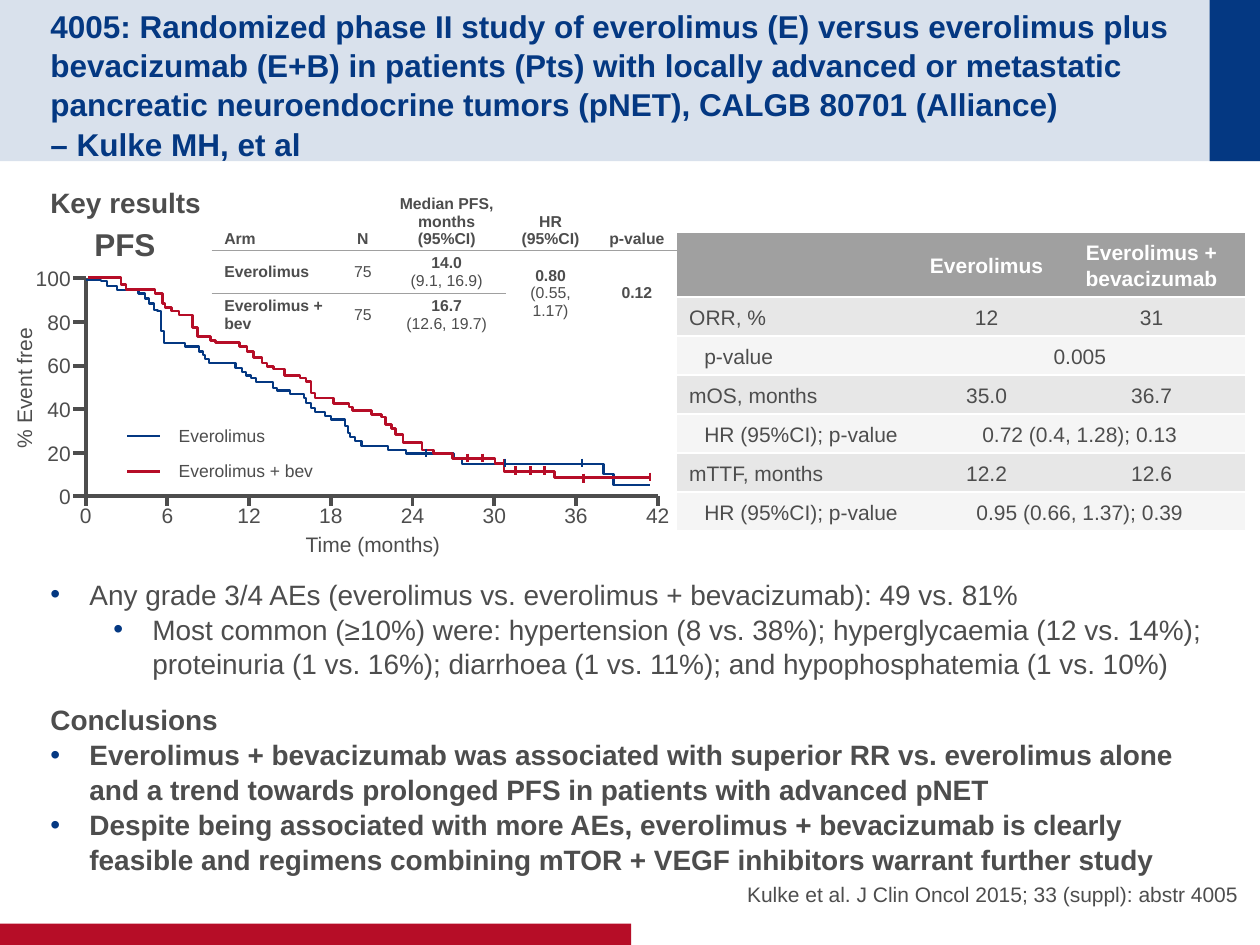
from lxml import etree
from pptx import Presentation
from pptx import util as u
from pptx.dml.color import RGBColor
from pptx.enum import shapes, text
from pptx.oxml import ns

NAVY, RED, INK, GREY, WHITE = "043882", "B60D27", "4D4D4D", "A0A0A0", "FFFFFF"
PALE_BLUE, BAND, PALE_BAND = "D9E1EC", "E7E7E7", "F5F5F5"
LEFT, CENTER, RIGHT = text.PP_ALIGN.LEFT, text.PP_ALIGN.CENTER, text.PP_ALIGN.RIGHT
TOP, MIDDLE, BOTTOM = text.MSO_ANCHOR.TOP, text.MSO_ANCHOR.MIDDLE, text.MSO_ANCHOR.BOTTOM
PLAIN_TABLE = "{2D5ABB26-0587-4C30-8999-92F81FD0307C}"


def rgb(value):
    return RGBColor.from_string(value)


def child(parent, tag, **attributes):
    return etree.SubElement(parent, ns.qn(tag), **attributes)


class Board:
    """A slide on a grid of 1000 columns by 750 rows, with one text style."""
    face = "Arial"

    def __init__(self, deck, layout):
        self.slide = deck.slides.add_slide(deck.slide_layouts[layout])
        self.shapes = self.slide.shapes
        self.unit = deck.slide_width // 1000

    def grid(self, *cells):
        return [u.Emu(round(cell * self.unit)) for cell in cells]

    def style(self, paragraph, size, color=INK, bold=False, align=LEFT):
        paragraph.alignment = align
        font = paragraph.font
        font.name, font.size, font.bold = self.face, u.Pt(size), bold
        font.color.rgb = rgb(color)

    def frame(self, shape, insets, anchor=TOP, wrap=True):
        frame = shape.text_frame
        frame.word_wrap, frame.vertical_anchor = wrap, anchor
        frame.auto_size = text.MSO_AUTO_SIZE.NONE
        (frame.margin_left, frame.margin_top,
         frame.margin_right, frame.margin_bottom) = self.grid(*insets)
        return frame

    def placeholder(self, index, at, insets, anchor=TOP):
        holder = self.slide.placeholders[index]
        holder.left, holder.top, holder.width, holder.height = self.grid(*at)
        self.shapes._spTree.append(holder._element)  # in front of the backdrop
        return self.frame(holder, insets, anchor)

    def label(self, at, words, size=12, align=LEFT, bold=False, anchor=TOP,
              rotation=0, insets=(10, 5, 10, 5)):
        box = self.shapes.add_textbox(*self.grid(*at))
        box.rotation = rotation
        paragraph = self.frame(box, insets, anchor, wrap=False).paragraphs[0]
        paragraph.text = words
        self.style(paragraph, size, bold=bold, align=align)

    def bar(self, at, color):
        bar = self.shapes.add_shape(shapes.MSO_SHAPE.RECTANGLE, *self.grid(*at))
        bar.shadow.inherit = False
        bar.fill.solid()
        bar.fill.fore_color.rgb = rgb(color)
        bar.line.fill.background()

    def line(self, start, end, color=INK, width=2.25):
        line = self.shapes.add_connector(shapes.MSO_CONNECTOR.STRAIGHT,
                                         *self.grid(*start, *end))
        line.line.color.rgb, line.line.width = rgb(color), u.Pt(width)
        child(line._element.spPr, "a:effectLst")

    def outline(self, points, color=INK, width=2.25):
        builder = self.shapes.build_freeform(*points[0], scale=self.unit)
        builder.add_line_segments(points[1:], close=False)
        outline = builder.convert_to_shape()
        outline.shadow.inherit = False
        outline.fill.background()
        outline.line.color.rgb, outline.line.width = rgb(color), u.Pt(width)

    def survival(self, start, drops, end, color, width):
        points = [start]
        for x, y in drops:
            points += [(x, points[-1][1]), (x, y)]
        self.outline(points + [(end, points[-1][1])], color, width)

    def bullet(self, paragraph, margin):
        props = paragraph._p.get_or_add_pPr()
        props.set("marL", str(self.grid(margin)[0]))
        props.set("indent", str(self.grid(-31 if margin else 0)[0]))
        if margin:
            child(child(props, "a:buClr"), "a:srgbClr", val=NAVY)
            child(props, "a:buFont", typeface=self.face)
            child(props, "a:buChar", char="•")
        else:
            child(props, "a:buNone")

    def table(self, at, columns, rows):
        table = self.shapes.add_table(len(rows), len(columns),
                                      *self.grid(*at, sum(columns), sum(rows))).table
        table._tbl.tblPr.find(ns.qn("a:tableStyleId")).text = PLAIN_TABLE
        table.first_row = table.horz_banding = False
        for column, width in zip(table.columns, self.grid(*columns)):
            column.width = width
        for row, height in zip(table.rows, self.grid(*rows)):
            row.height = height
        return table

    def cell(self, cell, fill=None, **edges):
        for side, color in edges.items():
            edge = child(cell._tc.get_or_add_tcPr(), f"a:{side}", w="12700")
            child(child(edge, "a:solidFill"), "a:srgbClr", val=color)
        if fill:
            cell.fill.solid()
            cell.fill.fore_color.rgb = rgb(fill)
        else:
            cell.fill.background()


def main():
    deck = Presentation()
    deck.slide_width, deck.slide_height = u.Inches(10), u.Inches(7.5)
    board = Board(deck, 3)

    # Backdrop
    board.bar((0, 0, 1000, 128), PALE_BLUE)
    board.bar((960, 0, 40, 128), NAVY)
    board.bar((0, 733, 501, 17), RED)

    # Title, list and citation
    title = board.placeholder(0, (40, 20, 901, 88), (0, 5, 0, 0), MIDDLE).paragraphs[0]
    title.text = ("4005: Randomized phase II study of everolimus (E) versus everolimus plus "
                  "bevacizumab (E+B) in patients (Pts) with locally advanced or metastatic "
                  "pancreatic neuroendocrine tumors (pNET), CALGB 80701 (Alliance) \v"
                  "– Kulke MH, et al")
    title.line_spacing = 1.04
    board.style(title, 18, NAVY, bold=True)

    findings = board.placeholder(1, (40, 452, 919, 245), (0, 5, 0, 5))
    points = [  # margin, space before, bold, words
        (31, 0, False, "Any grade 3/4 AEs (everolimus vs. everolimus + bevacizumab): 49 vs. 81%"),
        (81, 0, False, "Most common (≥10%) were: hypertension (8 vs. 38%); hyperglycaemia "
         "(12 vs. 14%); proteinuria (1 vs. 16%); diarrhoea (1 vs. 11%); and "
         "hypophosphatemia (1 vs. 10%)"),
        (0, 12, True, "Conclusions"),
        (31, 0, True, "Everolimus + bevacizumab was associated with superior RR vs. everolimus "
         "alone and a trend towards prolonged PFS in patients with advanced pNET"),
        (31, 0, True, "Despite being associated with more AEs, everolimus + bevacizumab is clearly "
         "feasible and regimens combining mTOR + VEGF inhibitors warrant further study")]
    for number, (margin, before, bold, words) in enumerate(points):
        point = findings.add_paragraph() if number else findings.paragraphs[0]
        point.text, point.level = words, int(margin > 31)
        board.bullet(point, margin)
        point.line_spacing, point.space_before = 1.04, u.Pt(before)
        board.style(point, 16, bold=bold)

    citation = board.placeholder(2, (508, 667, 475, 53), (0, 0, 0, 0), BOTTOM).paragraphs[0]
    citation.text = "Kulke et al. J Clin Oncol 2015; 33 (suppl): abstr 4005"
    board.bullet(citation, 0)
    citation.space_after = u.Pt(4)
    board.style(citation, 12, align=RIGHT)
    board.label((40, 142, 200, 36), "Key results", 16, bold=True, insets=(0, 5, 10, 5))

    # Response table
    rows = [("", "Everolimus", "Everolimus + bevacizumab"),
            ("ORR, %", "12", "31"), ("p-value", "0.005"),
            ("mOS, months", "35.0", "36.7"), ("HR (95%CI); p-value", "0.72 (0.4, 1.28); 0.13"),
            ("mTTF, months", "12.2", "12.6"), ("HR (95%CI); p-value", "0.95 (0.66, 1.37); 0.39")]
    response = board.table((537, 184), (189, 114, 148), [51] + [31] * 6)
    for r, row in enumerate(rows):
        shared = len(row) == 2
        for c in range(3):
            cell = response.cell(r, c)
            board.cell(cell, PALE_BAND if shared else BAND if r else GREY, lnT=WHITE, lnB=WHITE)
            cell.vertical_anchor = MIDDLE
            entry = cell.text_frame.paragraphs[0]
            entry.text = row[c] if c < len(row) else ""
            entry.line_spacing = u.Pt(15)
            board.style(entry, 12, INK if r else WHITE, not r, CENTER if c else LEFT)
        if shared:
            response.cell(r, 0).margin_left = board.grid(22)[0]
            response.cell(r, 1).merge(response.cell(r, 2))

    # Axes: 0 to 42 months, 0 to 100 percent
    left, top, right, base = 68, 221, 522, 394
    board.outline([(left, top), (left, base), (right, base)])
    for step in range(6):
        y = base - step * (base - top) / 5
        board.line((left - 10, y), (left, y))
        board.label((18, y - 15, 48, 30), str(step * 20), align=RIGHT, anchor=MIDDLE)
    for step in range(8):
        x = left + step * (right - left) / 7
        board.line((x, base), (x, base + 8))
        board.label((x - 19.5, base, 39, 30), str(step * 6), align=CENTER, anchor=MIDDLE)
    board.label((-39, 293, 116, 30), "% Event free", align=CENTER, rotation=270)
    board.label((232, 417, 128, 30), "Time (months)", align=CENTER)
    board.label((65, 174, 69, 40), "PFS", 18, bold=True)

    # Survival curves: each pair is where a drop happens and where it ends
    single = [(80, 223), (85, 227), (93, 230), (110, 233), (115, 237), (118, 241), (122, 246),
              (125, 247), (128, 263), (130, 272), (147, 275), (158, 279), (161, 282), (163, 285),
              (166, 288), (187, 292), (192, 295), (195, 298), (199, 300), (203, 303), (217, 308),
              (220, 310), (230, 313), (241, 316), (243, 320), (247, 324), (250, 327), (258, 330),
              (263, 333), (274, 338), (276, 344), (278, 347), (282, 350), (287, 354), (308, 357),
              (322, 360), (360, 364), (367, 368), (479, 376), (487, 385)]
    combined = [(96, 226), (100, 230), (123, 233), (129, 241), (131, 244), (136, 247), (142, 250),
                (153, 260), (157, 267), (167, 270), (171, 272), (190, 275), (196, 279), (201, 284),
                (208, 288), (212, 291), (217, 293), (226, 298), (238, 300), (243, 303), (247, 312),
                (250, 316), (265, 320), (277, 323), (280, 326), (295, 329), (303, 331), (306, 337),
                (311, 340), (314, 345), (320, 351), (335, 357), (344, 360), (359, 364), (393, 368),
                (400, 374), (440, 379)]
    board.survival((68, 222), single, 516, NAVY, 1.25)
    board.survival((70, 220), combined, 516, RED, 1.5)

    # Censoring marks
    red_marks = [(516, 375), (463, 376), (432, 370), (421, 370), (409, 370),
                 (383, 360), (371, 360), (400, 364)]
    blue_marks = [(462, 364), (401, 364), (338, 356)]
    for marks, color, width in ((red_marks, RED, 1.5), (blue_marks, NAVY, 1.25)):
        for x, y in marks:
            board.line((x, y), (x, y + 7), color, width)

    # Legend
    for y, arm, color in ((346, "Everolimus", NAVY), (374, "Everolimus + bev", RED)):
        board.line((101, y), (127, y), color, 1.5)
        board.label((132, y - 13.5, 128, 27), arm, 10)

    # Survival table: words before the bar are bold, those after it are on a plain line
    rows = [("Arm|", "N|", "Median PFS, months (95%CI)|", "HR (95%CI)|", "p-value|"),
            ("Everolimus|", "|75", "14.0|(9.1, 16.9)", "0.80|(0.55, 1.17)", "0.12|"),
            ("Everolimus + bev|", "|75", "16.7|(12.6, 19.7)", "|", "|")]
    survival = board.table((168, 150), (101, 38, 95, 70, 67), (49, 34, 34))
    for r, row in enumerate(rows):
        for c, words in enumerate(row):
            cell = survival.cell(r, c)
            board.cell(cell, **[{"lnB": GREY}, {"lnT": GREY}, {}][r])
            cell.vertical_anchor = MIDDLE if r else BOTTOM
            cell.margin_top = cell.margin_bottom = board.grid(2)[0]
            entry = cell.text_frame.paragraphs[0]
            board.style(entry, 9, align=CENTER if c else LEFT)
            bold, _, plain = words.partition("|")
            if bold:
                run = entry.add_run()
                run.text, run.font.bold = bold, True
            if bold and plain:
                entry.add_line_break()
            if plain:
                entry.add_run().text = plain
    for c in (3, 4):
        survival.cell(1, c).merge(survival.cell(2, c))

    deck.save("out.pptx")


if __name__ == "__main__":
    main()
